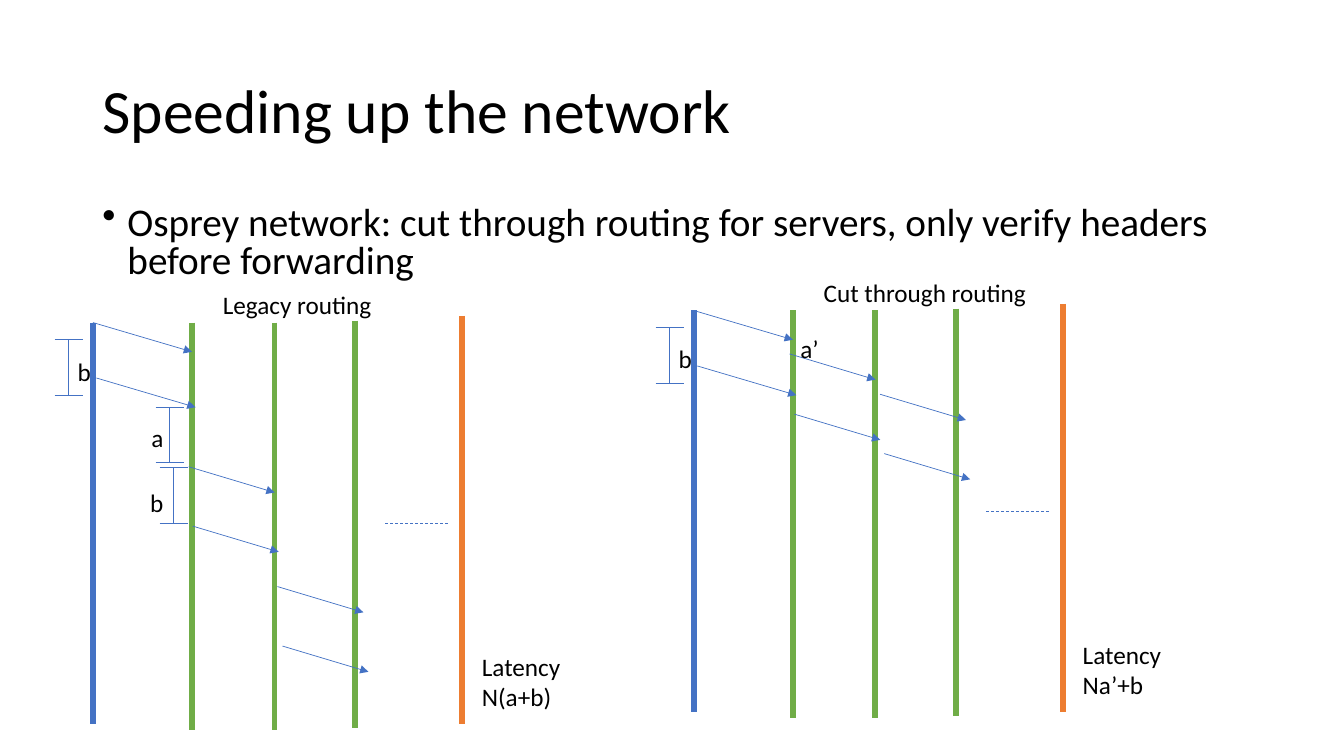
import pptx
import pptx.util
import pptx.dml.color
import pptx.enum.dml
import pptx.enum.shapes
import pptx.enum.text
import pptx.oxml.ns
import lxml.etree

Pt = pptx.util.Pt
RGBColor = pptx.dml.color.RGBColor
BLACK = RGBColor(0, 0, 0)
BLUE = RGBColor(0x44, 0x72, 0xC4)
GREEN = RGBColor(0x70, 0xAD, 0x47)
ORANGE = RGBColor(0xED, 0x7D, 0x31)
FONT = "Calibri"
SPAN = 39.6  # height of a time bracket


def style(para, size):
    para.font.name = FONT
    para.font.size = Pt(size)
    para.font.color.rgb = BLACK


def add_line(slide, start, end, color=BLUE, width=0.5, arrow=False, dash=False):
    line = slide.shapes.add_connector(
        pptx.enum.shapes.MSO_CONNECTOR.STRAIGHT,
        Pt(start[0]), Pt(start[1]), Pt(end[0]), Pt(end[1]))
    line.line.color.rgb = color
    line.line.width = Pt(width)
    if dash:
        line.line.dash_style = pptx.enum.dml.MSO_LINE.DASH
    qn = pptx.oxml.ns.qn
    if arrow:
        stroke = line.line._get_or_add_ln()
        lxml.etree.SubElement(stroke, qn("a:tailEnd"), type="triangle")
    lxml.etree.SubElement(line._element.spPr, qn("a:effectLst"))


def add_label(slide, left, top, width, text):
    lines = text.split("\n")
    box = slide.shapes.add_textbox(
        Pt(left), Pt(top), Pt(width), Pt(7.2 + 21.8 * len(lines)))
    frame = box.text_frame
    frame.word_wrap = False
    frame.auto_size = pptx.enum.text.MSO_AUTO_SIZE.SHAPE_TO_FIT_TEXT
    frame.text = text
    for para in frame.paragraphs:
        style(para, 18)


def add_span(slide, mid, top):
    """Time bracket: two caps joined by a stem."""
    for y in (top, top + SPAN):
        add_line(slide, (mid - 10, y), (mid + 10, y))
    add_line(slide, (mid, top), (mid, top + SPAN))


def add_title(slide, left, top, width, height):
    title = slide.shapes.title
    title.left, title.top = Pt(left), Pt(top)
    title.width, title.height = Pt(width), Pt(height)
    frame = title.text_frame
    frame.text = "Speeding up the network"
    frame.vertical_anchor = pptx.enum.text.MSO_ANCHOR.MIDDLE
    para = frame.paragraphs[0]
    para.alignment = pptx.enum.text.PP_ALIGN.LEFT
    para.line_spacing = 0.9
    style(para, 44)


def add_body(slide, left, top, width, height):
    box = slide.shapes.add_textbox(Pt(left), Pt(top), Pt(width), Pt(height))
    frame = box.text_frame
    frame.word_wrap = True
    frame.text = ("Osprey network: cut through routing for servers, "
                  "only verify headers before forwarding")
    para = frame.paragraphs[0]
    para.line_spacing = 0.8
    para.space_before = Pt(10)
    style(para, 28)
    # Hanging bullet
    props = para._p.get_or_add_pPr()
    props.set("marL", str(Pt(18)))
    props.set("indent", str(-Pt(18)))
    qn = pptx.oxml.ns.qn
    bullet = lxml.etree.Element(qn("a:buChar"), char="•")
    props.find(qn("a:spcBef")).addnext(bullet)


def add_chart(slide, left, top, name, name_wide, delay, hops, spans, notes):
    """Timing diagram whose first message leaves at (left, top)."""
    def at(x, y):
        return left + x, top + y

    # Sender, relays and receiver
    bars = [(0, 0, 286.6, BLUE), (70.8, 0, 291, GREEN), (129.6, 0, 291, GREEN),
            (187.2, -1.4, 289.4, GREEN), (263.5, -4.7, 286.6, ORANGE)]
    for x, start, end, color in bars:
        add_line(slide, at(x, start), at(x, end), color, 4)

    # Messages: first hop, then relayed hops
    for x, y in ((0, 0), (2.5, SPAN)):
        add_line(slide, at(x, y), at(x + 70.8, y + 20.9), arrow=True)
    for x, y in hops:
        add_line(slide, at(x, y), at(x + 61.4, y + 18.4), arrow=True)
    add_line(slide, at(208.8, 143.3), at(253.4, 143.3), dash=True)

    # Time brackets and labels
    for x, y in [(-17.3, 12.2)] + spans:
        add_span(slide, *at(x, y))
    labels = [(-18, 20.2, 24.5, "b"), (85.7, -27.4, name_wide, name),
              (270.7, 231.1, 73, "Latency\n" + delay)]
    for x, y, width, text in labels + notes:
        add_label(slide, *at(x, y), width, text)


def main():
    deck = pptx.Presentation()
    deck.slide_width, deck.slide_height = Pt(960), Pt(540)
    slide = deck.slides.add_slide(deck.slide_layouts[5])
    add_title(slide, 66, 28.8, 828, 104.4)
    add_body(slide, 66, 144, 828, 66)
    add_chart(slide, 66.4, 230.4, "Legacy routing", 121.7, "N(a+b)",
              hops=[(68.4, 103), (71.3, 145.4), (131.8, 188.6), (135.4, 231.1)],
              spans=[(54.7, 60.5), (57.6, 103.7)],
              notes=[(34.6, 67.7, 23, "a"), (33.8, 113.8, 24.5, "b")])
    add_chart(slide, 495.6, 221.8, "Cut through routing", 160.6, "Na’+b",
              hops=[(68.4, 31), (71.8, 74), (133, 59.8), (136, 102.2)],
              spans=[],
              notes=[(69, 13, 28, "a’")])
    deck.save("out.pptx")


if __name__ == "__main__":
    main()
